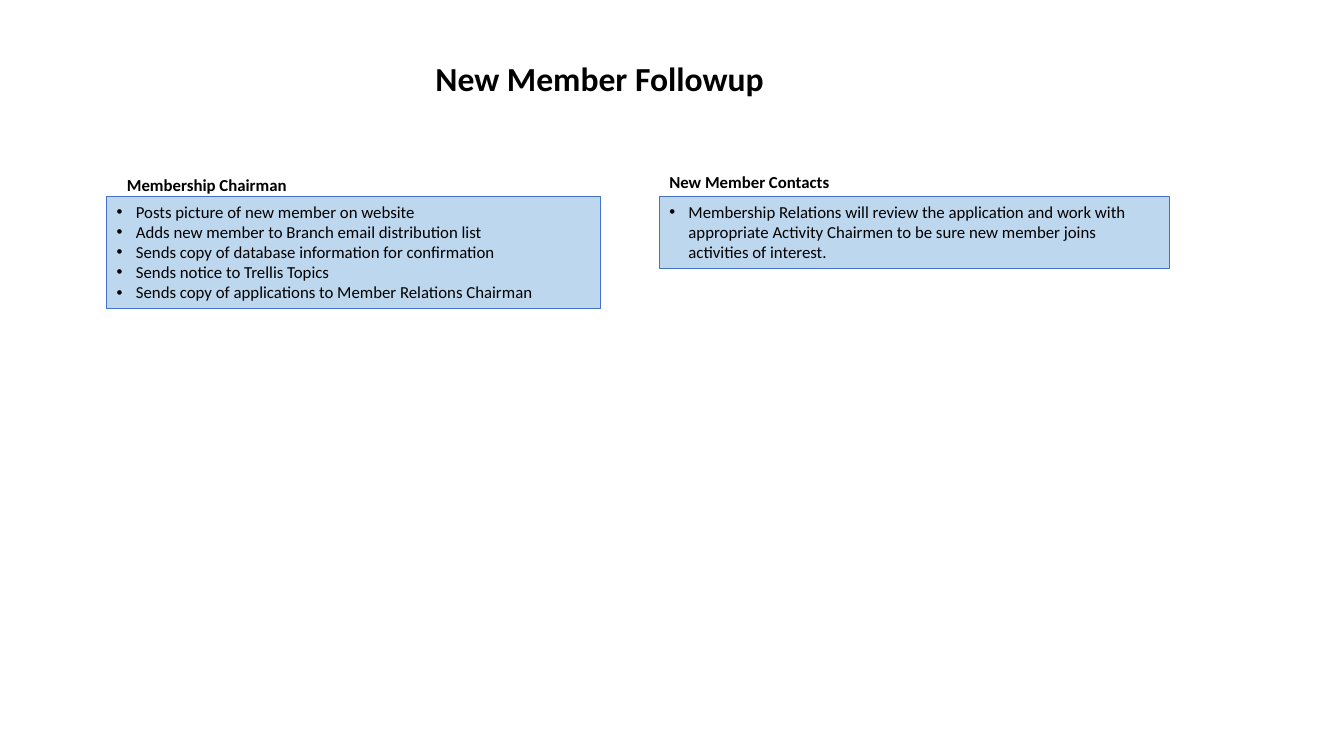
from pptx import Presentation
from pptx.dml.color import RGBColor
from pptx.enum.shapes import MSO_SHAPE as Shape
from pptx.enum.text import MSO_ANCHOR as Anchor, MSO_AUTO_SIZE as AutoSize, PP_ALIGN as Align
from pptx.oxml.ns import qn
from pptx.util import Inches, Pt
from lxml.etree import SubElement

TITLE = "New Member Followup"
COLUMNS = [
    dict(heading="Membership Chairman", left=1.06, width=4.9, head_left=1.16, head_top=1.68,
         duties=["Posts picture of new member on website",
                 "Adds new member to Branch email distribution list",
                 "Sends copy of database information for confirmation",
                 "Sends notice to Trellis Topics",
                 "Sends copy of applications to Member Relations Chairman"], lines=5),
    dict(heading="New Member Contacts", left=6.54, width=5.06, head_left=6.54, head_top=1.65,
         duties=["Membership Relations will review the application and work with "
                 "appropriate Activity Chairmen to be sure new member joins "
                 "activities of interest."], lines=3),
]
BOX_TOP, LINE_H, PADDING = 1.95, 0.2, 0.11
INDENT = Inches(0.19)


def color(value):
    return RGBColor.from_string(value)


def write(s, paragraphs, size=12, bold=False, bullet=False, wrap=True):
    tf = s.text_frame
    tf.word_wrap = wrap
    tf.auto_size = AutoSize.SHAPE_TO_FIT_TEXT
    tf.vertical_anchor = Anchor.TOP
    for i, text in enumerate(paragraphs):
        p = tf.add_paragraph() if i else tf.paragraphs[0]
        p.alignment = Align.LEFT
        r = p.add_run()
        r.text = text
        r.font.name, r.font.size, r.font.bold = "Calibri", Pt(size), bold
        r.font.color.rgb = color("000000")
        if bullet:
            pPr = p._p.get_or_add_pPr()
            pPr.set("marL", str(INDENT))
            pPr.set("indent", str(-INDENT))
            SubElement(pPr, qn("a:buFont")).set("typeface", "Arial")
            SubElement(pPr, qn("a:buChar")).set("char", "•")


def add_label(slide, text, left, top, width, height, **style):
    s = slide.shapes.add_textbox(*map(Inches, (left, top, width, height)))
    write(s, [text], bold=True, **style)


def add_duties(slide, column):
    height = column["lines"] * LINE_H + PADDING
    s = slide.shapes.add_shape(
        Shape.RECTANGLE, *map(Inches, (column["left"], BOX_TOP, column["width"], height)))
    s.shadow.inherit = False
    s.fill.solid()
    s.fill.fore_color.rgb = color("BDD7EE")
    s.line.color.rgb = color("4472C4")
    s.line.width = Pt(0.75)
    write(s, column["duties"], bullet=True)


def main():
    prs = Presentation()
    prs.slide_width, prs.slide_height = Inches(13.33), Inches(7.5)
    slide = prs.slides.add_slide(prs.slide_layouts[6])
    add_label(slide, TITLE, 4.22, 0.53, 3.49, 0.5, size=24)
    for column in COLUMNS:
        add_duties(slide, column)
        add_label(slide, column["heading"], column["head_left"], column["head_top"],
                  1.81, 0.3, wrap=False)
    prs.save("out.pptx")


if __name__ == "__main__":
    main()
